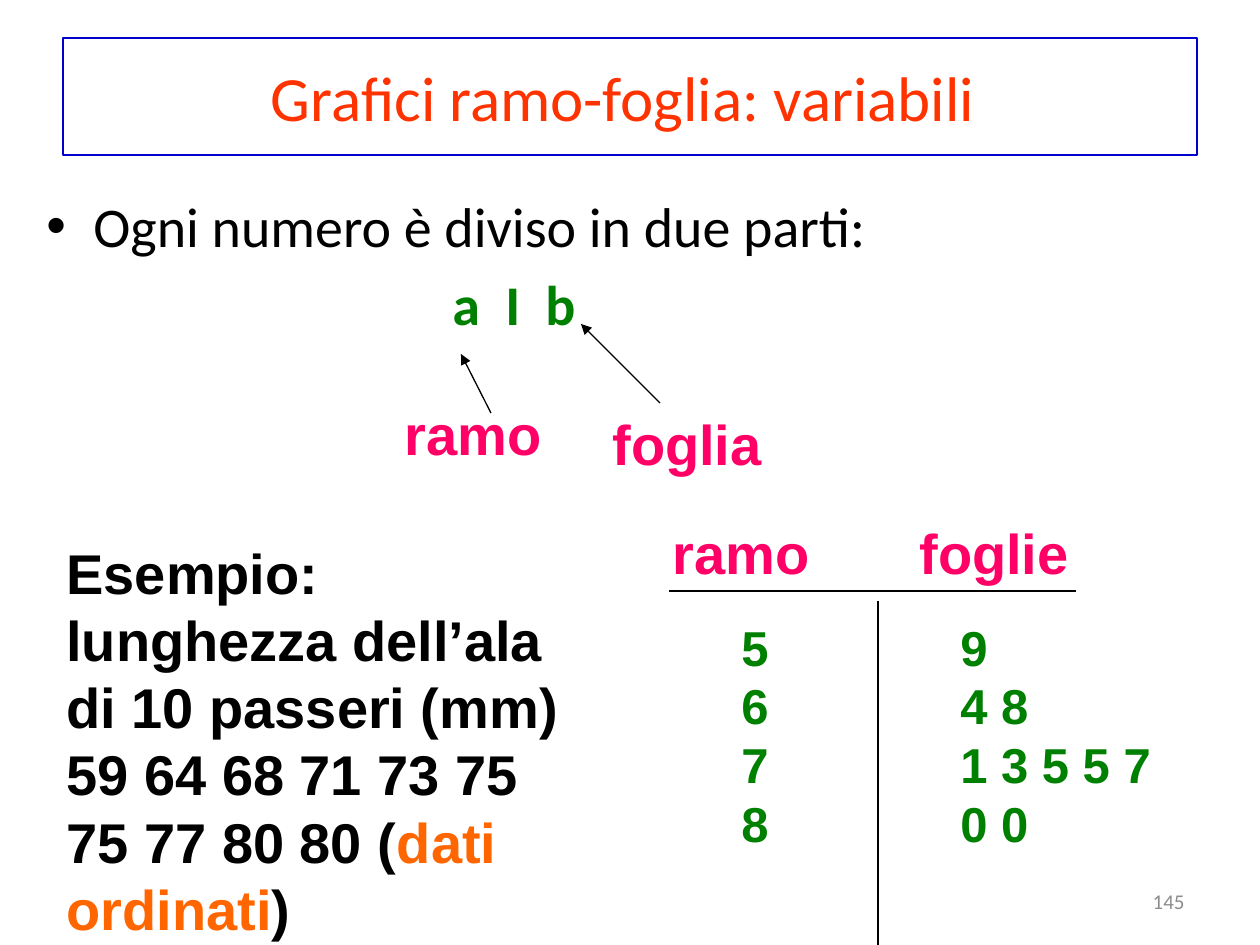
from dataclasses import dataclass

from pptx import Presentation
from pptx.dml.color import RGBColor
from pptx.enum.shapes import MSO_CONNECTOR as Connector, MSO_SHAPE as Shape
from pptx.enum.text import MSO_ANCHOR as Anchor, MSO_AUTO_SIZE as AutoSize, PP_ALIGN as Align
from pptx.oxml.ns import qn
from pptx.util import Emu, Pt
from lxml.etree import SubElement

PX_PER_INCH = 126
BLACK, PINK, GREEN, ORANGE = "000000", "FF0066", "008000", "FF6600"


@dataclass
class Area:
    left: int
    top: int
    width: int
    height: int


@dataclass
class Label:
    text: str
    area: Area
    wrap: bool


@dataclass
class Line:
    start: tuple[int, int]
    end: tuple[int, int]
    arrow: bool = False


def px(value: int) -> Emu:
    return Emu(round(value * 914400 / PX_PER_INCH))


def colour(code: str) -> RGBColor:
    return RGBColor.from_string(code)


def add_box(page, area: Area, outline: str = "", wrap: bool = True,
            anchor=Anchor.TOP, grow: bool = False):
    """Add a text box, or an unfilled rectangle when an outline is given."""
    place = [px(v) for v in (area.left, area.top, area.width, area.height)]
    if outline:
        box = page.shapes.add_shape(Shape.RECTANGLE, *place)
        box.shadow.inherit = False
        box.fill.background()
        box.line.color.rgb = colour(outline)
        box.line.width = Pt(0.75)
    else:
        box = page.shapes.add_textbox(*place)
    frame = box.text_frame
    frame.word_wrap = wrap
    frame.vertical_anchor = anchor
    frame.auto_size = AutoSize.SHAPE_TO_FIT_TEXT if grow else AutoSize.NONE
    return frame


def add_span(para, text: str, *, size: int = 32, font: str = "Arial",
             code: str = BLACK, bold: bool = True) -> None:
    span = para.add_run()
    span.text = text
    span.font.size = Pt(size)
    span.font.name = font
    span.font.bold = bold
    span.font.color.rgb = colour(code)


def add_paras(frame, rows, *, align=Align.LEFT, **style) -> list:
    """Write one paragraph per row; a row is a list of (text, colour) spans."""
    paras = []
    for index, row in enumerate(rows):
        para = frame.add_paragraph() if index else frame.paragraphs[0]
        para.alignment = align
        for text, code in row:
            add_span(para, text, code=code, **style)
        paras.append(para)
    return paras


def set_indent(para, margin: int, hanging: int = 0, bullet: str = "") -> None:
    props = para._p.get_or_add_pPr()
    props.set("marL", str(px(margin)))
    props.set("indent", str(-px(hanging)))
    para.space_before = Pt(6.4)
    if bullet:
        SubElement(props, qn("a:buFont")).set("typeface", "Arial")
        SubElement(props, qn("a:buChar")).set("char", bullet)


def add_line(page, line: Line) -> None:
    ends = [px(v) for v in (*line.start, *line.end)]
    link = page.shapes.add_connector(Connector.STRAIGHT, *ends)
    link.line.color.rgb = colour(BLACK)
    link.line.width = Pt(0.75)
    if line.arrow:
        SubElement(link.line._get_or_add_ln(), qn("a:tailEnd")).set("type", "triangle")
    SubElement(link._element.spPr, qn("a:effectLst"))


LABELS = [
    Label("ramo", Area(392, 393, 163, 79), False),
    Label("foglia", Area(600, 403, 209, 79), True),
    Label("ramo", Area(660, 512, 163, 79), False),
    Label("foglie", Area(907, 512, 209, 79), True),
]
LINES = [
    Line((491, 413), (461, 354), arrow=True),
    Line((660, 403), (581, 324), arrow=True),
    Line((669, 591), (1076, 591)),
    Line((878, 601), (878, 945)),
]
EXAMPLE = [
    [("Esempio:", BLACK)],
    [("lunghezza dell’ala", BLACK)],
    [("di 10 passeri (mm)", BLACK)],
    [("59 64 68 71 73 75 75 77 80 80 (", BLACK), ("dati", ORANGE)],
    [("ordinati", ORANGE), (")", BLACK)],
]
STEM_LEAVES = {"5": "9", "6": "4 8", "7": "1 3 5 5 7", "8": "0 0"}


def main() -> None:
    deck = Presentation()
    deck.slide_width, deck.slide_height = px(1260), px(945)
    page = deck.slides.add_slide(deck.slide_layouts[6])

    # Page number
    frame = add_box(page, Area(903, 876, 294, 50), anchor=Anchor.MIDDLE)
    add_paras(frame, [[("145", "8C8C8C")]], align=Align.RIGHT,
              size=12, font="Calibri", bold=False)

    # Title
    frame = add_box(page, Area(63, 38, 1134, 117), "0000CC", anchor=Anchor.MIDDLE)
    add_paras(frame, [[("Grafici ramo-foglia: variabili ", "FF3300")]],
              align=Align.CENTER, size=36, font="Calibri", bold=False)

    # Definition: bullet and the split number
    frame = add_box(page, Area(34, 185, 1163, 814))
    intro, split = add_paras(
        frame, [[("Ogni numero è diviso in due parti:", BLACK)], [("a  I  b", GREEN)]],
        font="Calibri")
    intro.runs[0].font.bold = False
    set_indent(intro, 47, 47, "•")
    set_indent(split, 406)

    # Arrows and table rules
    for line in LINES:
        add_line(page, line)

    # Stem and leaf labels
    for label in LABELS:
        frame = add_box(page, label.area, wrap=label.wrap, grow=True)
        add_paras(frame, [[(label.text, PINK)]])

    # Worked example
    frame = add_box(page, Area(54, 532, 536, 549), grow=True)
    add_paras(frame, EXAMPLE)

    # Stem and leaf columns
    stems = add_box(page, Area(729, 611, 54, 249), "FFFFFF", wrap=False, grow=True)
    leaves = add_box(page, Area(948, 611, 217, 249), grow=True)
    for frame, values in ((stems, STEM_LEAVES.keys()), (leaves, STEM_LEAVES.values())):
        add_paras(frame, [[(value, GREEN)] for value in values], size=28)

    deck.save("out.pptx")


if __name__ == "__main__":
    main()
